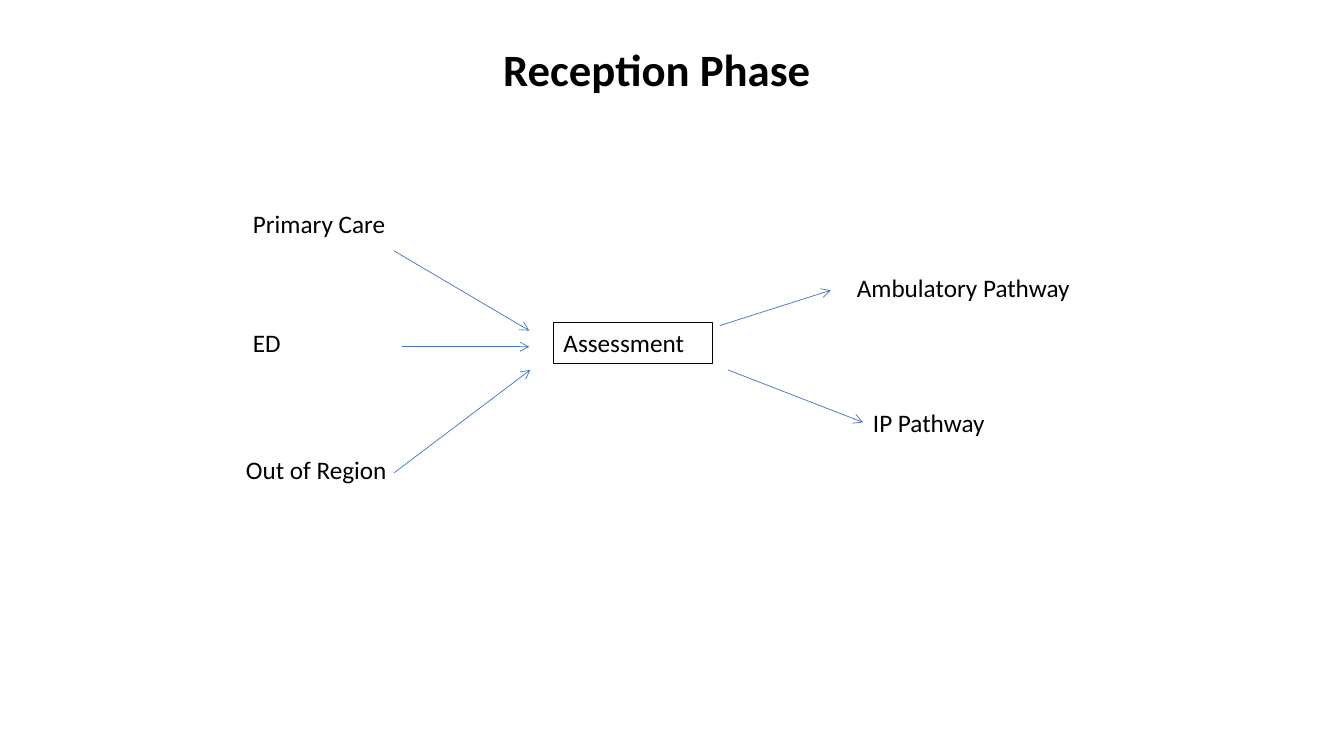
from lxml.etree import SubElement
from pptx import Presentation
from pptx.dml.color import RGBColor
from pptx.enum.shapes import MSO_CONNECTOR, MSO_SHAPE
from pptx.enum.text import MSO_ANCHOR, MSO_AUTO_SIZE, PP_ALIGN
from pptx.oxml.ns import qn
from pptx.util import Inches, Pt

FONT = "Calibri"
BLACK = "000000"
BLUE = "4472C4"
LABEL_HEIGHT = 0.4

LABELS = [
    ("Primary Care", 2.41, 2.02, 2.05),
    ("ED", 2.41, 3.2, 1.89),
    ("Out of Region", 2.34, 4.46, 2.05),
    ("Ambulatory Pathway", 8.4, 2.65, 2.36),
    ("IP Pathway", 8.56, 3.99, 2.05),
]
ARROWS = [
    ((3.91, 2.49), (5.25, 3.28)),
    ((3.99, 3.44), (5.25, 3.44)),
    ((3.91, 4.69), (5.26, 3.67)),
    ((7.14, 3.23), (8.24, 2.88)),
    ((7.22, 3.67), (8.56, 4.19)),
]


def color(value):
    """Turn a hex string into a colour."""
    return RGBColor.from_string(value)


class FlowSlide:
    """Hold the page and the style of the flow diagram."""

    def __init__(self, page):
        """Keep the page to draw on."""
        self.page = page

    def set_text(self, shape, text, size, align=PP_ALIGN.LEFT, bold=False):
        """Put one formatted line of text into a shape."""
        frame = shape.text_frame
        frame.text = text
        frame.word_wrap = True
        frame.auto_size = MSO_AUTO_SIZE.SHAPE_TO_FIT_TEXT
        frame.vertical_anchor = MSO_ANCHOR.TOP
        para = frame.paragraphs[0]
        para.alignment = align
        para.line_spacing = 1.0
        para.space_before = Pt(0)
        for span in para.runs:
            span.font.name = FONT
            span.font.size = Pt(size)
            span.font.bold = bold
            span.font.color.rgb = color(BLACK)

    def title(self, text, left, top, width, height):
        """Place the slide title."""
        box = self.page.shapes.title
        box.left, box.top = Inches(left), Inches(top)
        box.width, box.height = Inches(width), Inches(height)
        self.set_text(box, text, 32, PP_ALIGN.CENTER, True)

    def label(self, text, left, top, width):
        """Add a plain text label."""
        box = self.page.shapes.add_textbox(
            Inches(left), Inches(top), Inches(width), Inches(LABEL_HEIGHT))
        self.set_text(box, text, 18)

    def outlined_box(self, text, left, top, width):
        """Add a label with a thin frame."""
        box = self.page.shapes.add_shape(
            MSO_SHAPE.RECTANGLE, Inches(left), Inches(top),
            Inches(width), Inches(LABEL_HEIGHT))
        box.shadow.inherit = False
        box.fill.background()
        box.line.color.rgb = color(BLACK)
        box.line.width = Pt(0.25)
        self.set_text(box, text, 18)

    def arrow(self, start, end):
        """Add a straight line with an open arrowhead at its end."""
        points = [Inches(value) for value in (*start, *end)]
        connector = self.page.shapes.add_connector(MSO_CONNECTOR.STRAIGHT, *points)
        connector.line.color.rgb = color(BLUE)
        connector.line.width = Pt(0.5)
        properties = connector._element.spPr
        SubElement(properties.find(qn("a:ln")), qn("a:tailEnd"), type="arrow")
        SubElement(properties, qn("a:effectLst"))


def main():
    """Build the reception phase slide."""
    deck = Presentation()
    deck.slide_width, deck.slide_height = Inches(13.33), Inches(7.5)
    slide = FlowSlide(deck.slides.add_slide(deck.slide_layouts[5]))
    slide.title("Reception Phase", 4.23, 0.36, 4.57, 0.64)
    slide.outlined_box("Assessment", 5.49, 3.2, 1.57)
    for label in LABELS:
        slide.label(*label)
    for start, end in ARROWS:
        slide.arrow(start, end)
    deck.save("out.pptx")


if __name__ == "__main__":
    main()
